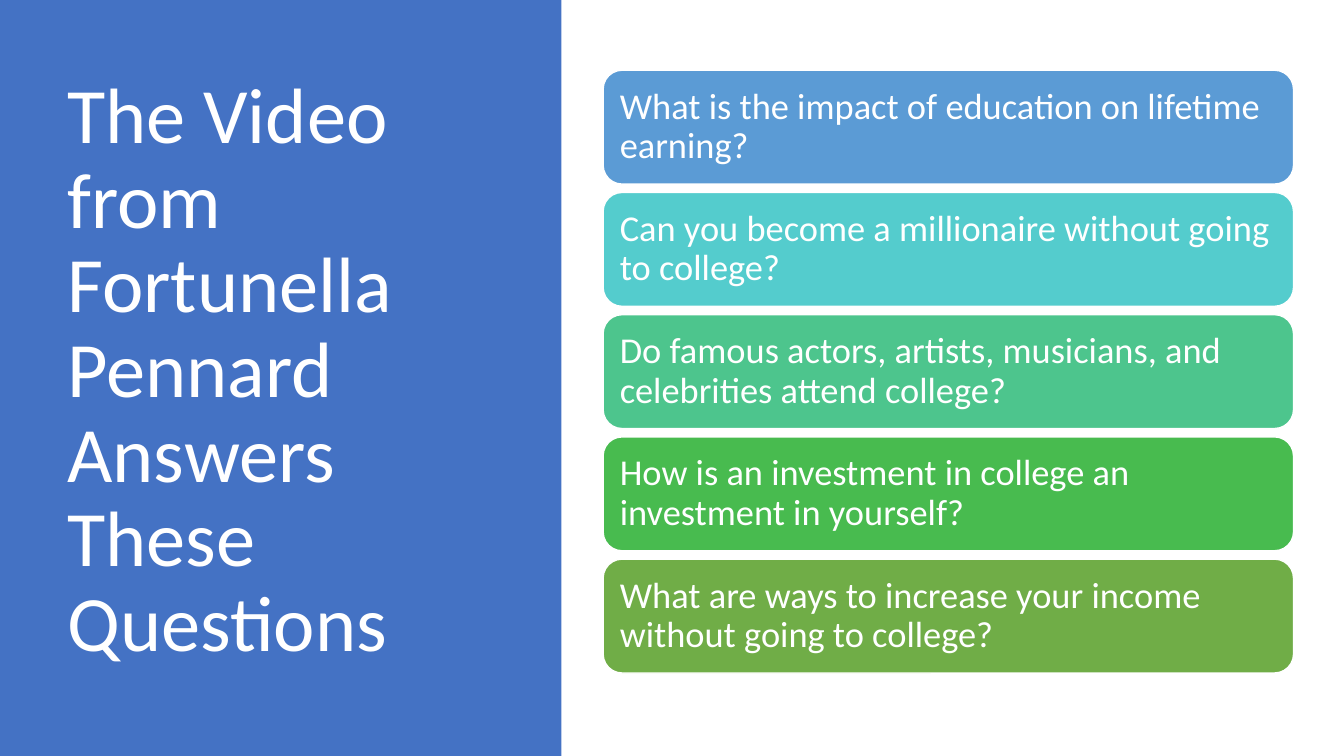
from dataclasses import dataclass

from pptx import Presentation
from pptx.dml.color import RGBColor
from pptx.enum.shapes import MSO_SHAPE as Shape
from pptx.enum.text import MSO_ANCHOR as Anchor, PP_ALIGN as Align
from pptx.util import Cm, Pt


@dataclass(frozen=True)
class Theme:
    font: str = "Calibri"
    title_size: int = 56
    card_size: int = 26
    white: str = "FFFFFF"
    panel: str = "4472C4"
    cards: tuple = ("5B9BD5", "54CCCD", "4DC58D", "48BB4F", "70AD47")


THEME = Theme()
TITLE = "The Video from Fortunella Pennard Answers These Questions"
QUESTIONS = [
    "What is the impact of education on lifetime earning?",
    "Can you become a millionaire without going to college?",
    "Do famous actors, artists, musicians, and celebrities attend college?",
    "How is an investment in college an investment in yourself?",
    "What are ways to increase your income without going to college?",
]


def write(sp, text, *, size, inset_x, inset_y):
    """Fill a shape with left-aligned, vertically centred white text."""
    tf = sp.text_frame
    tf.word_wrap = True
    tf.vertical_anchor = Anchor.MIDDLE
    tf.margin_left = tf.margin_right = Cm(inset_x)
    tf.margin_top = tf.margin_bottom = Cm(inset_y)
    p = tf.paragraphs[0]
    p.alignment = Align.LEFT
    p.line_spacing = 0.9
    r = p.add_run()
    r.text = text
    r.font.name = THEME.font
    r.font.size = Pt(size)
    r.font.color.rgb = RGBColor.from_string(THEME.white)


def add_block(slide, kind, box, fill, line=None):
    sp = slide.shapes.add_shape(kind, *map(Cm, box))
    sp.shadow.inherit = False
    sp.fill.solid()
    sp.fill.fore_color.rgb = RGBColor.from_string(fill)
    if line:
        sp.line.color.rgb = RGBColor.from_string(line)
        sp.line.width = Pt(1)
    else:
        sp.line.fill.background()
    return sp


def add_title_panel(slide, box, title):
    left, top, width, height = box
    add_block(slide, Shape.RECTANGLE, box, THEME.panel)
    title_box = (left + 1.45, top + 1.73, width - 3.58, height - 3.76)
    sp = slide.shapes.add_textbox(*map(Cm, title_box))
    write(sp, title, size=THEME.title_size, inset_x=0.25, inset_y=0.13)


def add_question_cards(slide, box, questions, gap=0.21):
    left, top, width, height = box
    card_height = (height + gap) / len(questions) - gap
    for i, (question, color) in enumerate(zip(questions, THEME.cards)):
        card = (left, top + i * (card_height + gap), width, card_height)
        sp = add_block(slide, Shape.ROUNDED_RECTANGLE, card, color, THEME.white)
        write(sp, question, size=THEME.card_size, inset_x=0.28, inset_y=0.28)


def main():
    prs = Presentation()
    prs.slide_width, prs.slide_height = Cm(33.87), Cm(19.05)
    slide = prs.slides.add_slide(prs.slide_layouts[6])

    # Title on the left, questions on the right
    add_title_panel(slide, (0, 0, 14.15, 19.05), TITLE)
    add_question_cards(slide, (15.2, 1.77, 17.4, 15.19), QUESTIONS)

    prs.save("out.pptx")


if __name__ == "__main__":
    main()
